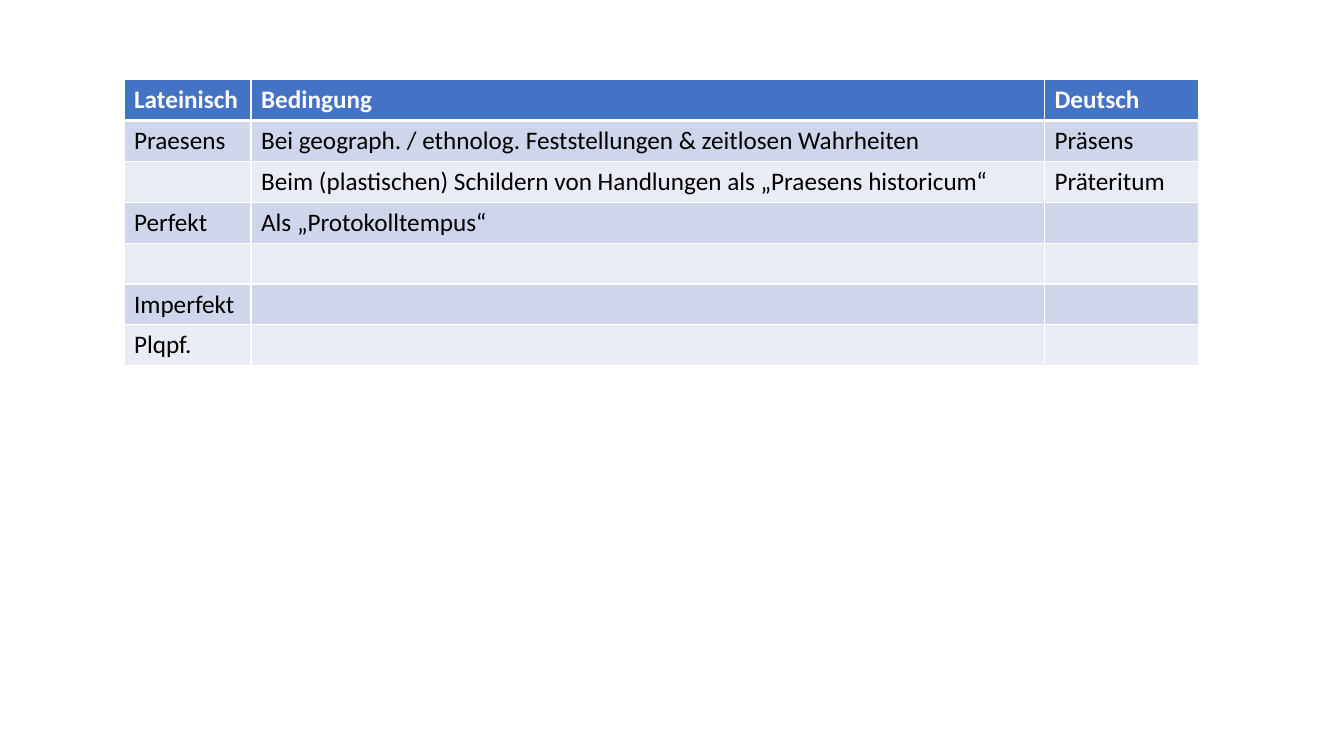
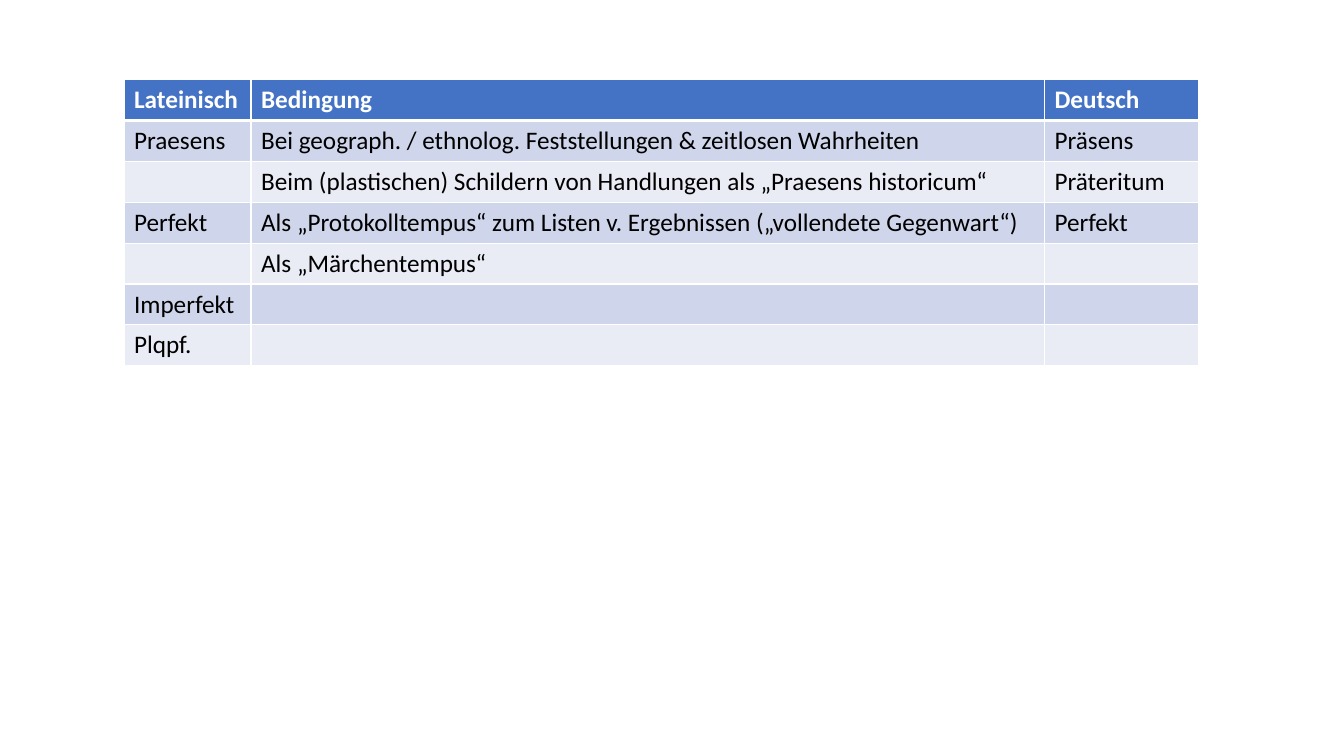
from pptx import Presentation
from pptx.dml.color import RGBColor
from pptx.oxml import parse_xml
from pptx.oxml.ns import nsdecls
from pptx.util import Inches, Pt

WHITE, BLACK, BLUE = "FFFFFF", "000000", "4472C4"
BANDS = ["CFD5EA", "E9EBF5"]
BOX = (1.23, 0.79, 10.66, 2.84)
WIDTHS = [1.26, 7.87, 1.53]

HEAD = ("Lateinisch", "Bedingung", "Deutsch")
PRESENT = [
    ("Praesens", "Bei geograph. / ethnolog. Feststellungen & zeitlosen Wahrheiten", "Präsens"),
    ("", "Beim (plastischen) Schildern von Handlungen als „Praesens historicum“", "Präteritum"),
]
PAST = [("Imperfekt", "", ""), ("Plqpf.", "", "")]
PERFECT = [
    [("Perfekt", "Als „Protokolltempus“", ""), ("", "", "")],
    [
        ("Perfekt", "Als „Protokolltempus“ zum Listen v. Ergebnissen („vollendete Gegenwart“)", "Perfekt"),
        ("", "Als „Märchentempus“", ""),
    ],
]


def color(code):
    return RGBColor.from_string(code)


def edge(cell, side, width):
    cell._tc.get_or_add_tcPr().append(parse_xml(
        f'<a:ln{side} {nsdecls("a")} w="{Pt(width)}"><a:solidFill>'
        f'<a:srgbClr val="{WHITE}"/></a:solidFill></a:ln{side}>'
    ))


def style(cell, text, row):
    """Format one cell; a thick rule parts the header from the body."""
    head = row == 0
    thick = {0: "B", 1: "T"}.get(row)
    for side in "LRTB":
        edge(cell, side, 3 if side == thick else 1)
    cell.fill.solid()
    cell.fill.fore_color.rgb = color(BLUE if head else BANDS[(row - 1) % 2])
    cell.text = text
    font = cell.text_frame.paragraphs[0].font
    for name, value in {"name": "Calibri", "size": Pt(18), "bold": head}.items():
        setattr(font, name, value)
    font.color.rgb = color(WHITE if head else BLACK)


def tenses(slide, box, rows):
    frame = slide.shapes.add_table(len(rows), len(HEAD), *map(Inches, box))
    table = frame.table
    for column, width in zip(table.columns, WIDTHS):
        column.width = Inches(width)
    for r, row in enumerate(rows):
        for c, text in enumerate(row):
            style(table.cell(r, c), text, r)


def main():
    deck = Presentation()
    deck.slide_width, deck.slide_height = Inches(13.33), Inches(7.5)
    blank = deck.slide_layouts[6]
    for perfect in PERFECT:
        tenses(deck.slides.add_slide(blank), BOX, [HEAD, *PRESENT, *perfect, *PAST])
    deck.save("out.pptx")


if __name__ == "__main__":
    main()
